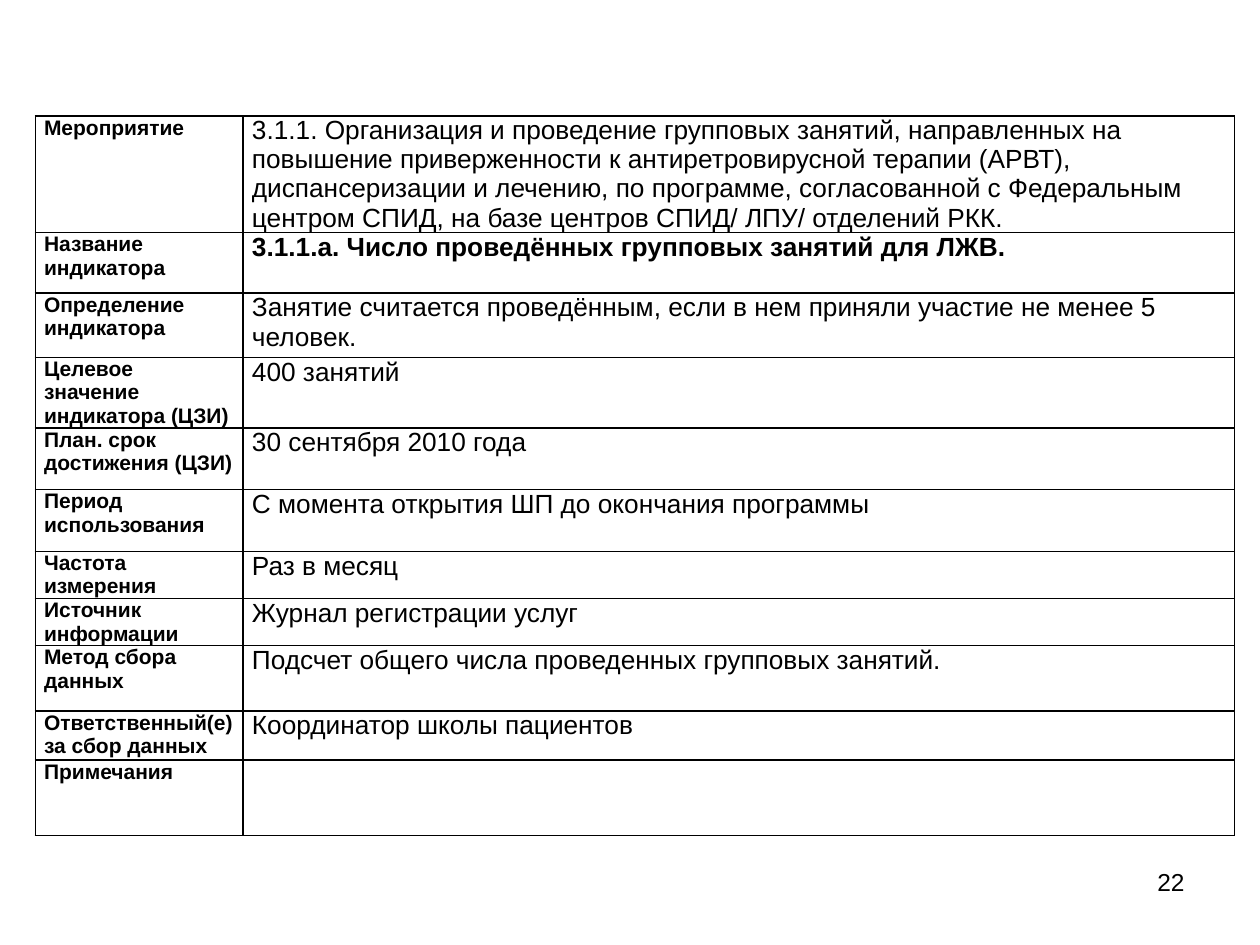
from pptx import Presentation
from pptx import util as u
from pptx.dml.color import RGBColor
from pptx.enum import text
from pptx.oxml import parse_xml
from pptx.oxml.ns import nsdecls


def write(tf, content, size, bold=False, align=text.PP_ALIGN.LEFT, space=0, color="000000"):
    tf.word_wrap = True
    p = tf.paragraphs[0]
    p.alignment = align
    p.space_before = p.space_after = u.Pt(space)
    r = p.add_run()
    r.text = content
    r.font.name = "Arial"
    r.font.size = u.Pt(size)
    r.font.bold = bold
    r.font.color.rgb = RGBColor.from_string(color)


def add_borders(cell, color="000000", width=1):
    tc_pr = cell._tc.get_or_add_tcPr()
    for i, side in enumerate(("lnL", "lnR", "lnT", "lnB")):
        tc_pr.insert(i, parse_xml(
            f'<a:{side} {nsdecls("a")} w="{u.Pt(width)}"><a:solidFill>'
            f'<a:srgbClr val="{color}"/></a:solidFill></a:{side}>'))


prs = Presentation()
prs.slide_width, prs.slide_height = u.Inches(10), u.Inches(7.5)
s = prs.slides.add_slide(prs.slide_layouts[6])

rows = [
    (0.6, "Мероприятие", "3.1.1. Организация и проведение групповых занятий, направленных на повышение "
     "приверженности к антиретровирусной терапии (АРВТ), диспансеризации и лечению, по программе, "
     "согласованной с Федеральным центром СПИД, на базе центров СПИД/ ЛПУ/ отделений РКК."),
    (0.48, "Название индикатора", "3.1.1.а. Число проведённых групповых занятий для ЛЖВ."),
    (0.51, "Определение индикатора",
     "Занятие считается проведённым, если в нем приняли участие не менее 5 человек."),
    (0.44, "Целевое значение индикатора (ЦЗИ)", "400 занятий"),
    (0.49, "План. срок достижения (ЦЗИ)", "30 сентября 2010 года"),
    (0.49, "Период использования", "С момента открытия ШП до окончания программы"),
    (0.33, "Частота измерения", "Раз в месяц"),
    (0.37, "Источник информации", "Журнал регистрации услуг"),
    (0.52, "Метод сбора данных", "Подсчет общего числа проведенных групповых занятий."),
    (0.39, "Ответственный(е) за сбор данных", "Координатор школы пациентов"),
    (0.6, "Примечания", ""),
]
columns = (1.65, 7.87)

table = s.shapes.add_table(
    len(rows), len(columns), u.Inches(0.28), u.Inches(0.92),
    u.Inches(sum(columns)), u.Inches(sum(row[0] for row in rows))).table
table.first_row = table.horz_banding = False
for column, width in zip(table.columns, columns):
    column.width = u.Inches(width)

for i, (height, label, value) in enumerate(rows):
    table.rows[i].height = u.Inches(height)
    for cell, content, size, bold in (
            (table.cell(i, 0), label, 12, True),
            (table.cell(i, 1), value, 15, label == "Название индикатора")):
        cell.margin_left = cell.margin_right = u.Inches(0.07)
        cell.margin_top = cell.margin_bottom = 0
        cell.fill.background()
        add_borders(cell)
        if content:
            write(cell.text_frame, content, size, bold, space=6)

number = s.shapes.add_textbox(u.Inches(7.17), u.Inches(6.83), u.Inches(2.33), u.Inches(0.52))
write(number.text_frame, "22", 14, align=text.PP_ALIGN.RIGHT)

prs.save("out.pptx")
